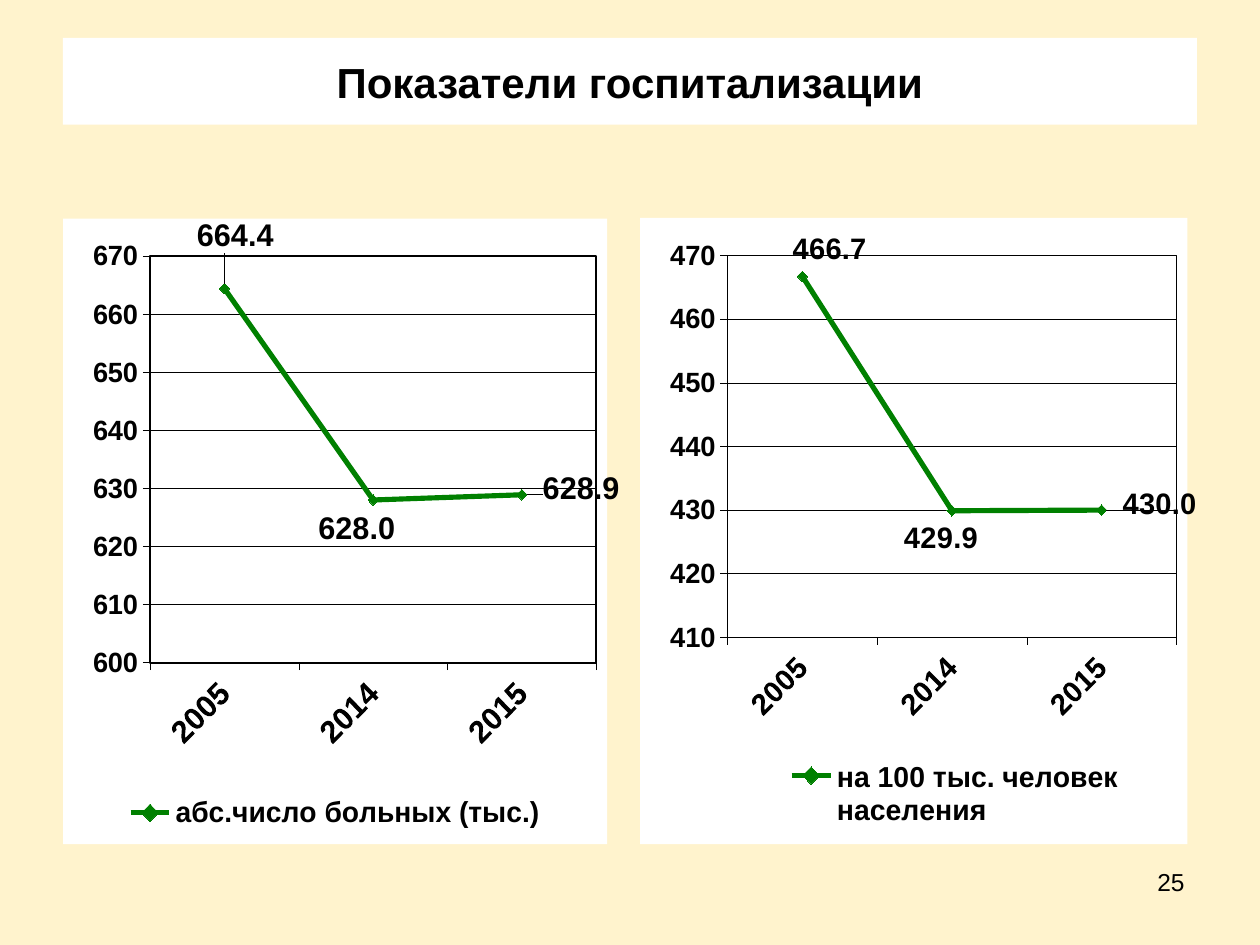
from lxml import etree
from pptx import Presentation
from pptx.chart.data import CategoryChartData
from pptx.dml.color import RGBColor
from pptx.enum.chart import XL_CHART_TYPE as ChartType
from pptx.enum.chart import XL_LABEL_POSITION as LabelPosition
from pptx.enum.chart import XL_LEGEND_POSITION as LegendPosition
from pptx.enum.chart import XL_MARKER_STYLE as MarkerStyle
from pptx.enum.chart import XL_TICK_MARK as TickMark
from pptx.enum.shapes import MSO_SHAPE as Shape
from pptx.enum.text import MSO_ANCHOR as Anchor
from pptx.enum.text import PP_ALIGN as Align
from pptx.oxml import parse_xml
from pptx.oxml.ns import nsdecls, qn
from pptx.util import Inches, Pt

CREAM = RGBColor(0xFF, 0xF3, 0xCD)
WHITE = RGBColor(0xFF, 0xFF, 0xFF)
BLACK = RGBColor(0x00, 0x00, 0x00)
GREEN = RGBColor(0x00, 0x80, 0x00)

TITLE = "Показатели госпитализации"
PAGE_NUMBER = "25"
YEARS = ["2005", "2014", "2015"]
LABEL_POSITIONS = [LabelPosition.ABOVE, LabelPosition.BELOW, LabelPosition.RIGHT]
CHARTS = [
    {
        "name": "абс.число больных (тыс.)",
        "values": [664.4, 628.0, 628.9],
        "scale": (600, 670),
        "plot": (0.16, 0.06, 0.82, 0.65),
        "legend": (0.12, 0.92, 0.76, 0.06),
        "label_size": 17.9,
        "label_shifts": [(0.02, -0.04), (-0.03, 0), (0.02, -0.01)],
    },
    {
        "name": "на 100 тыс. человек населения",
        "values": [466.7, 429.9, 430.0],
        "scale": (410, 470),
        "plot": (0.16, 0.06, 0.82, 0.61),
        "legend": (0.25, 0.86, 0.65, 0.12),
        "label_size": 16.9,
        "label_shifts": [(0.05, 0), (-0.02, 0), (0.02, -0.01)],
    },
]
MARGIN, CHART_TOP, CHART_WIDTH, CHART_HEIGHT, GAP = 0.5, 1.73, 4.42, 4.97, 0.16


def set_font(font, size, bold=True):
    for name, value in {"name": "Arial", "size": Pt(size), "bold": bold}.items():
        setattr(font, name, value)
    font.color.rgb = BLACK


def set_line(line, color, width):
    line.color.rgb = color
    line.width = Pt(width)


def write(shape, text, size, bold, alignment, anchor):
    frame = shape.text_frame
    frame.word_wrap = True
    frame.vertical_anchor = anchor
    paragraph = frame.paragraphs[0]
    paragraph.alignment = alignment
    run = paragraph.add_run()
    run.text = text
    set_font(run.font, size, bold)


def place(parent, index, numbers, inner=False):
    for old in parent.findall(qn("c:layout")):
        parent.remove(old)
    layout = etree.Element(qn("c:layout"))
    manual = etree.SubElement(layout, qn("c:manualLayout"))
    settings = [("layoutTarget", "inner")] if inner else []
    if len(numbers) == 4:
        settings += [("xMode", "edge"), ("yMode", "edge")]
    settings += zip("xywh", numbers)
    for tag, value in settings:
        etree.SubElement(manual, qn(f"c:{tag}")).set("val", str(value))
    parent.insert(index, layout)


def area_format(line):
    return parse_xml(
        f'<c:spPr {nsdecls("c", "a")}><a:solidFill><a:srgbClr val="{WHITE}"/></a:solidFill>'
        f'{line}</c:spPr>'
    )


def add_line_chart(slide, left, content):
    data = CategoryChartData(number_format="0.0")
    data.categories = YEARS
    data.add_series(content["name"], content["values"])
    chart = slide.shapes.add_chart(
        ChartType.LINE_MARKERS, Inches(left), Inches(CHART_TOP),
        Inches(CHART_WIDTH), Inches(CHART_HEIGHT), data,
    ).chart
    chart.has_title = False
    set_font(chart.font, 17.9)

    chart_element = chart.element.find(qn("c:chart"))
    chart_element.addnext(area_format("<a:ln><a:noFill/></a:ln>"))
    plot_area = chart_element.find(qn("c:plotArea"))
    place(plot_area, 0, content["plot"], inner=True)
    plot_area.append(area_format(
        f'<a:ln w="12700"><a:solidFill><a:srgbClr val="{BLACK}"/></a:solidFill></a:ln>'
    ))

    value_axis, category_axis = chart.value_axis, chart.category_axis
    for axis, size in ((category_axis, content["label_size"]), (value_axis, 15.9)):
        axis.major_tick_mark = TickMark.OUTSIDE
        axis.minor_tick_mark = TickMark.NONE
        set_font(axis.tick_labels.font, size)
        set_line(axis.format.line, BLACK, 0.25)
    body = category_axis._element.find(qn("c:txPr")).find(qn("a:bodyPr"))
    body.set("rot", "-2700000")
    body.set("vert", "horz")
    value_axis.minimum_scale, value_axis.maximum_scale = content["scale"]
    value_axis.major_unit = 10
    value_axis.tick_labels.number_format = "0"
    value_axis.tick_labels.number_format_is_linked = False
    set_line(value_axis.major_gridlines.format.line, BLACK, 0.25)

    chart.has_legend = True
    legend = chart.legend
    legend.position = LegendPosition.RIGHT
    legend.include_in_layout = False
    set_font(legend.font, 16.5)
    place(legend._element, 1, content["legend"])

    plot = chart.plots[0]
    plot.vary_by_categories = False
    series = plot.series[0]
    series.smooth = False
    set_line(series.format.line, GREEN, 3)
    marker = series.marker
    marker.style, marker.size = MarkerStyle.DIAMOND, 6
    marker.format.fill.solid()
    marker.format.fill.fore_color.rgb = GREEN
    marker.format.line.color.rgb = GREEN

    labels = series.data_labels
    labels.show_value = True
    labels.number_format = "0.0"
    labels.number_format_is_linked = False
    set_font(labels.font, content["label_size"])
    for index, (position, shift) in enumerate(zip(LABEL_POSITIONS, content["label_shifts"])):
        label = series.points[index].data_label
        set_font(label.font, content["label_size"])
        label.position = position
        place(labels._element.findall(qn("c:dLbl"))[index], 1, shift)


def main():
    presentation = Presentation()
    presentation.slide_width, presentation.slide_height = Inches(10), Inches(7.5)
    slide = presentation.slides.add_slide(presentation.slide_layouts[6])
    slide.background.fill.solid()
    slide.background.fill.fore_color.rgb = CREAM

    title = slide.shapes.add_shape(
        Shape.RECTANGLE, Inches(MARGIN), Inches(0.3), Inches(9), Inches(0.69)
    )
    title.shadow.inherit = False
    title.fill.solid()
    title.fill.fore_color.rgb = WHITE
    title.line.fill.background()
    write(title, TITLE, 24, True, Align.CENTER, Anchor.MIDDLE)

    for index, content in enumerate(CHARTS):
        add_line_chart(slide, MARGIN + index * (CHART_WIDTH + GAP), content)

    number = slide.shapes.add_textbox(
        Inches(7.17), Inches(6.83), Inches(2.33), Inches(0.52)
    )
    write(number, PAGE_NUMBER, 14, False, Align.RIGHT, Anchor.TOP)
    presentation.save("out.pptx")


if __name__ == "__main__":
    main()
